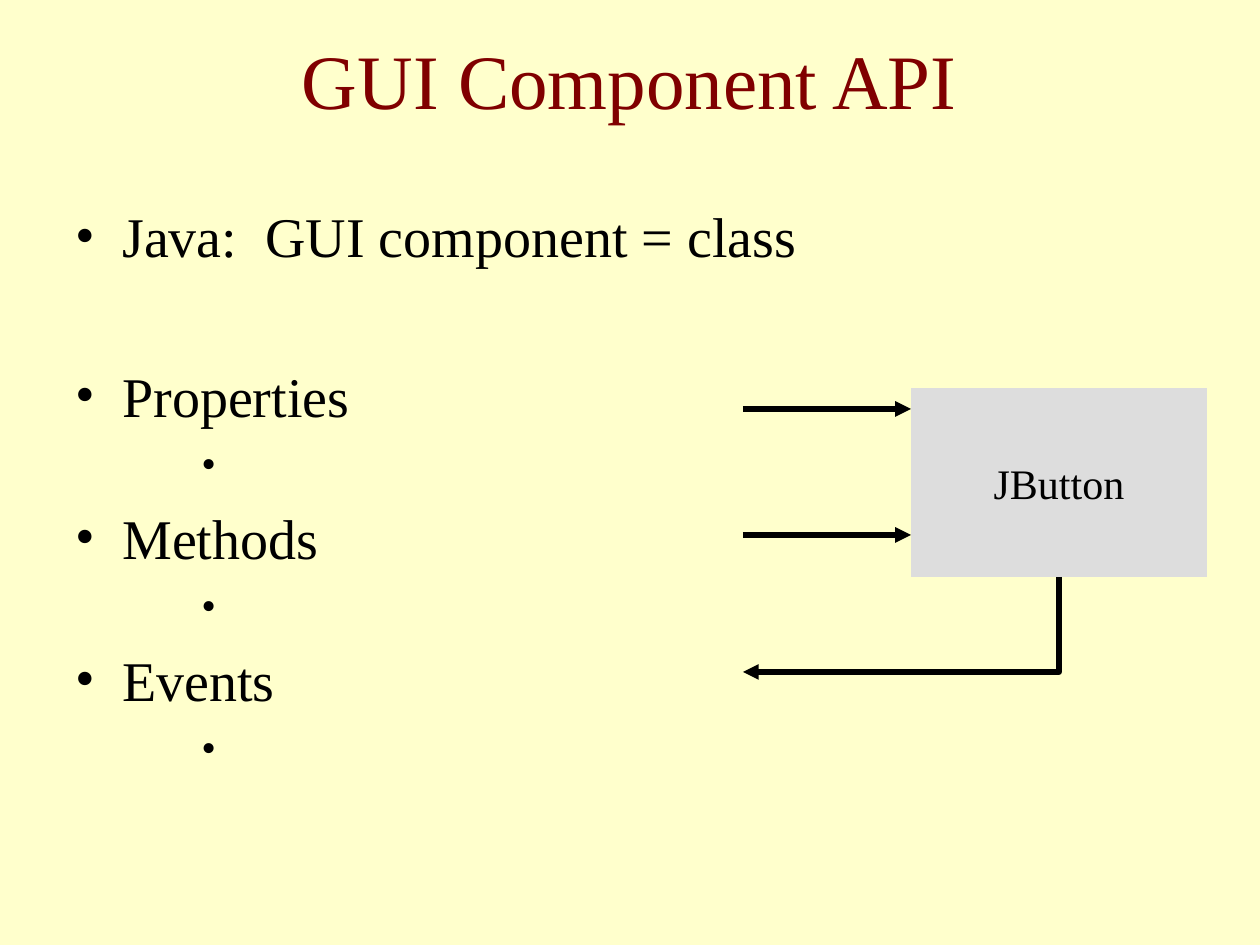
from lxml import etree
from pptx import Presentation
from pptx import util as u
from pptx.dml.color import RGBColor
from pptx.enum import shapes, text
from pptx.oxml.ns import qn

PX = 914400 // 126
FONT = "Times New Roman"
BLACK, MAROON, GREY, CREAM = "000000", "800000", "DDDDDD", "FFFFCC"

TITLE = "GUI Component API"
# text, level, space before in points
BULLETS = [
    ("Java:  GUI component = class", 0, 0),
    ("Properties", 0, 52.5),
    (" ", 2, 6),
    ("Methods", 0, 8),
    (" ", 2, 6),
    ("Events", 0, 8),
    (" ", 2, 6),
]
# level: font size in points, left margin and hanging indent in px
LEVELS = {0: (32, 47, 47), 2: (24, 158, 32)}
BUTTON = (911, 388, 296, 189)
ARROW_START = 743
INPUT_ROWS = (409, 535)
EVENT_ROW = 672


def px(*values):
    return [u.Emu(value * PX) for value in values]


def color(value):
    return RGBColor.from_string(value)


def place(shape, *area):
    shape.left, shape.top, shape.width, shape.height = px(*area)


def write(para, words, size, ink):
    span = para.add_run()
    span.text = words
    span.font.name, span.font.size = FONT, u.Pt(size)
    span.font.color.rgb = color(ink)


def add_bullet(para, margin, hanging):
    props = para._p.get_or_add_pPr()
    props.set("marL", str(margin * PX))
    props.set("indent", str(-hanging * PX))
    etree.SubElement(props, qn("a:buFont"), typeface=FONT)
    etree.SubElement(props, qn("a:buChar"), char="•")


def style_arrow(shape):
    shape.line.color.rgb = color(BLACK)
    shape.line.width = u.Pt(3)
    line = shape.line._get_or_add_ln()
    etree.SubElement(line, qn("a:tailEnd"), type="triangle")


deck = Presentation()
deck.slide_width, deck.slide_height = px(1260, 945)
page = deck.slides.add_slide(deck.slide_layouts[5])
page.background.fill.solid()
page.background.fill.fore_color.rgb = color(CREAM)

# Title
title = page.shapes.title
place(title, 10, 0, 1239, 158)
title.text_frame.vertical_anchor = text.MSO_ANCHOR.MIDDLE
para = title.text_frame.paragraphs[0]
para.alignment = text.PP_ALIGN.CENTER
write(para, TITLE, 44, MAROON)

# Bullet list
box = page.shapes.add_textbox(*px(63, 189, 1197, 756))
frame = box.text_frame
frame.word_wrap = True
frame.margin_top = px(13)[0]
for index, (words, level, gap) in enumerate(BULLETS):
    para = frame.add_paragraph() if index else frame.paragraphs[0]
    size, margin, hanging = LEVELS[level]
    para.level = level
    para.space_before = u.Pt(gap)
    add_bullet(para, margin, hanging)
    write(para, words, size, BLACK)

# Component button
button = page.shapes.add_shape(shapes.MSO_SHAPE.ACTION_BUTTON_CUSTOM, *px(*BUTTON))
button.shadow.inherit = False
button.fill.solid()
button.fill.fore_color.rgb = color(GREY)
button.line.fill.background()
button.text_frame.word_wrap = False
button.text_frame.vertical_anchor = text.MSO_ANCHOR.MIDDLE
para = button.text_frame.paragraphs[0]
para.alignment = text.PP_ALIGN.CENTER
write(para, "JButton", 24, BLACK)

# Arrows into the button
left, top, width, height = BUTTON
for row in INPUT_ROWS:
    arrow = page.shapes.add_connector(
        shapes.MSO_CONNECTOR.STRAIGHT, *px(ARROW_START, row, left, row))
    style_arrow(arrow)
    etree.SubElement(arrow._element.spPr, qn("a:effectLst"))

# Event arrow out of the button
middle = left + width // 2
builder = page.shapes.build_freeform(middle, top + height, scale=PX)
builder.add_line_segments([(middle, EVENT_ROW), (ARROW_START, EVENT_ROW)], close=False)
event = builder.convert_to_shape()
event.shadow.inherit = False
event.fill.background()
style_arrow(event)

deck.save("out.pptx")
